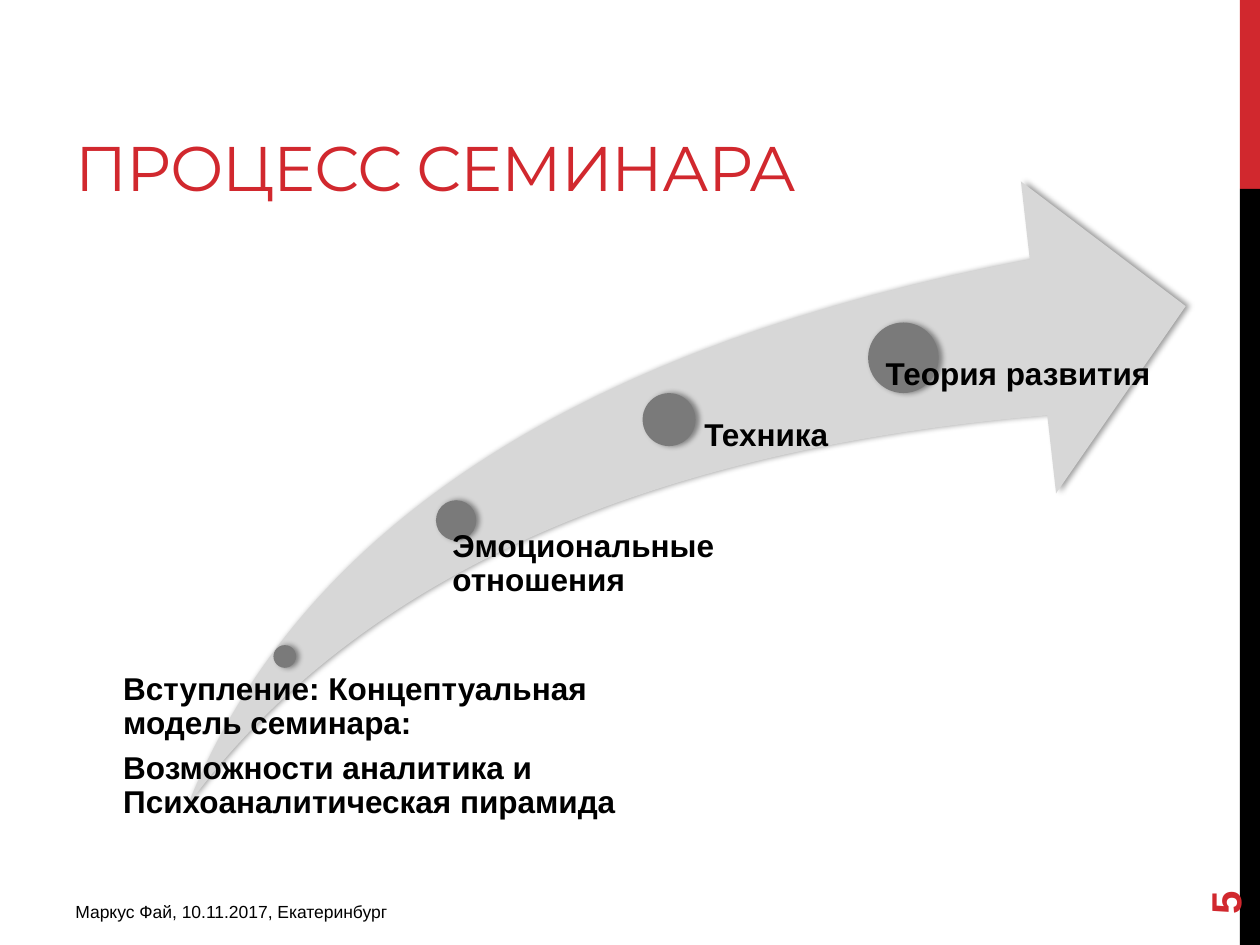
from lxml.etree import SubElement
from pptx import Presentation
from pptx.dml.color import RGBColor
from pptx.enum.shapes import MSO_SHAPE
from pptx.enum.text import MSO_ANCHOR, MSO_AUTO_SIZE, PP_ALIGN
from pptx.oxml.ns import qn
from pptx.util import Inches, Pt

# Content
TITLE = "ПРОЦЕСС СЕМИНАРА"
FOOTER = "Маркус Фай, 10.11.2017, Екатеринбург"
PAGE = "5"
RED, BLACK, ARROW, DOT = "D1282E", "000000", "D7D7D7", "7A7A7A"

# Each step: dot (left, top, diameter), label box, left inset, paragraphs
STEPS = [
    ((2.17, 5.12, 0.18), (0.88, 5.34, 4.13, 1.67), 0.1,
     ["Вступление: Концептуальная модель семинара:",
      "Возможности аналитика и Психоаналитическая пирамида"]),
    ((3.46, 3.97, 0.32), (3.42, 4.21, 2.45, 2.26), 0.17,
     ["Эмоциональные отношения"]),
    ((5.1, 3.12, 0.42), (5.37, 3.33, 1.66, 3.06), 0.22, ["Техника"]),
    ((6.89, 2.56, 0.56), (6.73, 2.84, 2.56, 3.55), 0.3, ["Теория развития"]),
]


def rgb(color):
    return RGBColor.from_string(color)


def add_shadow(sp):
    effects = sp._element.spPr.find(qn("a:effectLst"))
    shadow = SubElement(effects, qn("a:outerShdw"), blurRad=str(Pt(3.1)),
                        dist=str(Pt(1.8)), dir="0", rotWithShape="0")
    color = SubElement(shadow, qn("a:srgbClr"), val=BLACK)
    SubElement(color, qn("a:alpha"), val="40000")


def add_shape(s, kind, box, color, shadow=False):
    sp = s.shapes.add_shape(kind, *map(Inches, box))
    sp.shadow.inherit = False
    sp.fill.solid()
    sp.fill.fore_color.rgb = rgb(color)
    sp.line.fill.background()
    if shadow:
        add_shadow(sp)
    return sp


def style(p, size, color=BLACK, bold=False, font="Arial"):
    p.alignment = PP_ALIGN.LEFT
    p.font.size = Pt(size)
    p.font.name = font
    p.font.bold = bold
    p.font.color.rgb = rgb(color)


def add_text(s, box, lines, size, color=BLACK, bold=False):
    sp = s.shapes.add_textbox(*map(Inches, box))
    tf = sp.text_frame
    tf.word_wrap = True
    tf.text = "\n".join(lines)
    for p in tf.paragraphs:
        style(p, size, color, bold)
    return sp


prs = Presentation()
prs.slide_width, prs.slide_height = Inches(10), Inches(7.5)
s = prs.slides.add_slide(prs.slide_layouts[5])

# Side bars
add_shape(s, MSO_SHAPE.RECTANGLE, (9.84, 0, 0.16, 1.5), RED)
add_shape(s, MSO_SHAPE.RECTANGLE, (9.84, 1.5, 0.16, 6), BLACK)

# Title
title = s.shapes.title
title.left, title.top, title.width, title.height = map(Inches, (0.5, 0.17, 6.33, 1.5))
tf = title.text_frame
tf.text = TITLE
tf.auto_size = MSO_AUTO_SIZE.NONE
tf.vertical_anchor = MSO_ANCHOR.BOTTOM
style(tf.paragraphs[0], 36, RED, font="Montserrat")
tf.paragraphs[0].runs[0].font._element.set("spc", "-60")

# Rising arrow
arrow = add_shape(s, MSO_SHAPE.SWOOSH_ARROW, (1.49, 1.44, 7.92, 4.95), ARROW, shadow=True)
arrow.adjustments[0] = arrow.adjustments[1] = 0.25

# Steps along the arrow
for (x, y, d), box, inset, lines in STEPS:
    add_shape(s, MSO_SHAPE.OVAL, (x, y, d, d), DOT, shadow=True)
    tf = add_text(s, box, lines, 18, bold=True).text_frame
    tf.margin_left = Inches(inset)
    tf.margin_top = tf.margin_right = tf.margin_bottom = 0
    for p in tf.paragraphs:
        p.line_spacing = 0.9
        p.space_after = Pt(6.3)

# Footer and page number
add_text(s, (0.5, 7.1, 3.75, 0.31), [FOOTER], 10)
number = add_text(s, (9, 6.44, 1.44, 0.4), [PAGE], 24, RED, bold=True)
number.rotation = 270
number.text_frame.vertical_anchor = MSO_ANCHOR.MIDDLE

prs.save("out.pptx")
